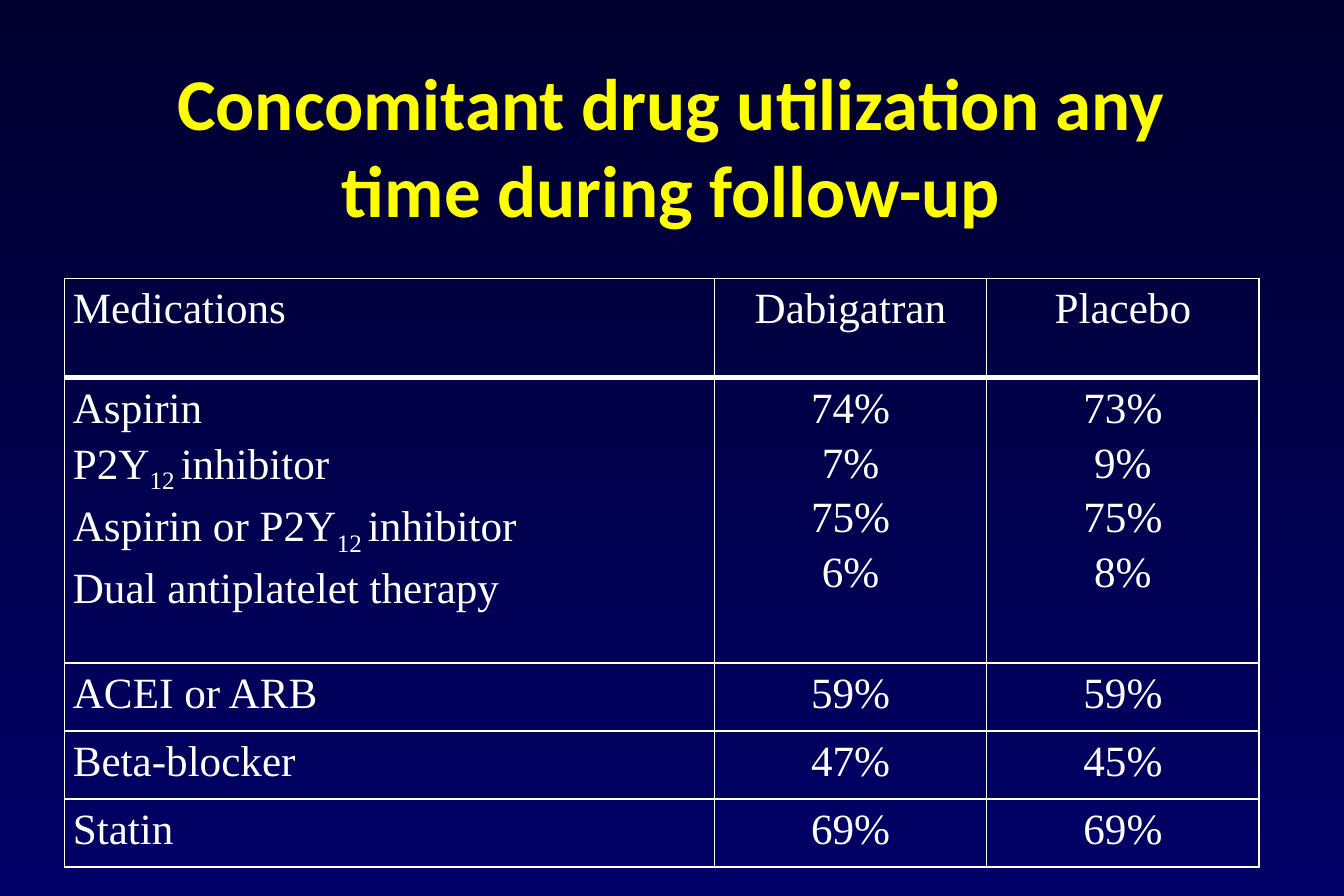
from typing import NamedTuple

from lxml.etree import SubElement
from pptx import Presentation
from pptx.dml.color import RGBColor
from pptx.enum.text import MSO_ANCHOR, PP_ALIGN
from pptx.oxml.ns import qn
from pptx.util import Pt

PX = 9144  # 100 px to the inch
WHITE = "FFFFFF"
WIDTHS = [544, 228, 228]


class Row(NamedTuple):
    height: int
    cells: tuple[str, str, str]
    after: int = 10


ROWS = [
    Row(83, ("Medications", "Dabigatran", "Placebo")),
    Row(239, (
        "Aspirin\nP2Y_12 _inhibitor\nAspirin or P2Y_12 _inhibitor\nDual antiplatelet therapy",
        "74%\n7%\n75%\n6%",
        "73%\n9%\n75%\n8%",
    ), after=0),
    Row(57, ("ACEI or ARB", "59%", "59%")),
    Row(57, ("Beta-blocker", "47%", "45%")),
    Row(57, ("Statin", "69%", "69%")),
]


def px(n: int) -> int:
    return n * PX


def rgb(code: str) -> RGBColor:
    return RGBColor.from_string(code)


def write(frame, text: str, *, size: int, font: str, color: str, bold=False,
          align=PP_ALIGN.LEFT, space=1.0, after=0) -> None:
    """Fill a text frame: a line per paragraph, subscripts between underscores."""
    frame.word_wrap = True
    for i, line in enumerate(text.split("\n")):
        para = frame.add_paragraph() if i else frame.paragraphs[0]
        para.alignment = align
        para.line_spacing = space
        para.space_after = Pt(after)
        for j, part in enumerate(line.split("_")):
            run = para.add_run()
            run.text = part
            run.font.size = Pt(size)
            run.font.name = font
            run.font.bold = bold
            run.font.color.rgb = rgb(color)
            if j % 2:
                run.font._element.set("baseline", "-25000")


def border(cell, **sides: int) -> None:
    """Draw the cell's edges; sides come in the order L, R, T, B, in points."""
    props = cell._tc.get_or_add_tcPr()
    for side, width in sides.items():
        line = SubElement(props, qn(f"a:ln{side}"), w=str(Pt(width)))
        fill = SubElement(line, qn("a:solidFill"))
        SubElement(fill, qn("a:srgbClr"), val=WHITE)


def paint(slide) -> None:
    fill = slide.background.fill
    fill.gradient()
    fill.gradient_angle = 270
    for stop, code in zip(fill.gradient_stops, ("00002F", "000066")):
        stop.color.rgb = rgb(code)


def title(slide) -> None:
    box = slide.shapes.add_textbox(px(84), px(50), px(956), px(142))
    box.text_frame.vertical_anchor = MSO_ANCHOR.MIDDLE
    write(box.text_frame, "Concomitant drug utilization any time during follow-up",
          size=44, font="Calibri", color="FFFF00", bold=True, align=PP_ALIGN.CENTER)


def grid(slide) -> None:
    high = sum(row.height for row in ROWS)
    table = slide.shapes.add_table(len(ROWS), len(WIDTHS), px(54), px(233),
                                   px(sum(WIDTHS)), px(high)).table
    table.first_row = table.horz_banding = False
    for col, width in zip(table.columns, WIDTHS):
        col.width = px(width)
    for r, row in enumerate(ROWS):
        table.rows[r].height = px(row.height)
        for c, text in enumerate(row.cells):
            cell = table.cell(r, c)
            cell.margin_left = cell.margin_right = px(7)
            cell.margin_top = cell.margin_bottom = 0
            border(cell, L=1, R=1, T=3 if r == 1 else 1, B=3 if r == 0 else 1)
            cell.fill.background()
            write(cell.text_frame, text, size=26, font="Times New Roman", color=WHITE,
                  align=PP_ALIGN.CENTER if c else PP_ALIGN.LEFT,
                  space=1.15, after=row.after)


def main() -> None:
    deck = Presentation()
    deck.slide_width, deck.slide_height = px(1125), px(750)
    slide = deck.slides.add_slide(deck.slide_layouts[6])
    paint(slide)
    title(slide)
    grid(slide)
    deck.save("out.pptx")


if __name__ == "__main__":
    main()
